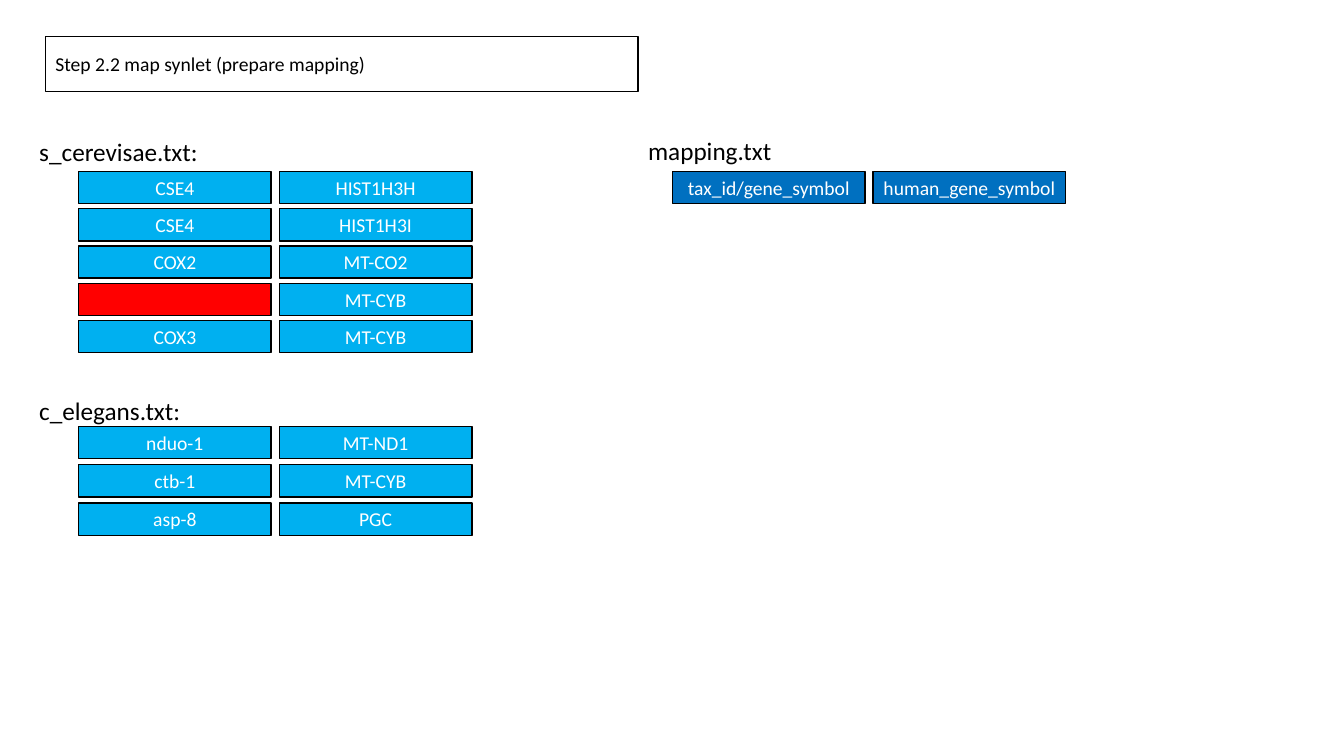
from pptx import Presentation
from pptx.dml.color import RGBColor
from pptx.enum.shapes import MSO_SHAPE as SHAPE
from pptx.enum.text import MSO_ANCHOR as ANCHOR, PP_ALIGN as ALIGN
from pptx.util import Pt

PX = 9144
BLACK, WHITE = "000000", "FFFFFF"
SKY, BLUE, RED = "00B0F0", "0070C0", "FF0000"


def px(n):
    return n * PX


def rgb(value):
    return RGBColor.from_string(value)


class Deck:
    font = "Calibri"
    cell_w, cell_h, column_step = 191, 32, 199

    def __init__(self, prs):
        self.slide = prs.slides.add_slide(prs.slide_layouts[6])

    def set_text(self, s, text, size, color, align=ALIGN.LEFT, margin=10):
        tf = s.text_frame
        tf.word_wrap = True
        tf.margin_left = tf.margin_right = px(margin)
        tf.text = text
        p = tf.paragraphs[0]
        p.alignment = align
        for r in p.runs:
            r.font.name = self.font
            r.font.size = Pt(size)
            r.font.color.rgb = rgb(color)

    def rect(self, x, y, w, h, fill=None):
        s = self.slide.shapes.add_shape(SHAPE.RECTANGLE, px(x), px(y), px(w), px(h))
        s.shadow.inherit = False
        if fill:
            s.fill.solid()
            s.fill.fore_color.rgb = rgb(fill)
        else:
            s.fill.background()
        s.line.color.rgb = rgb(BLACK)
        s.line.width = Pt(1)
        s.text_frame.vertical_anchor = ANCHOR.MIDDLE
        return s

    def title(self, x, y, w, h, text):
        self.set_text(self.rect(x, y, w, h), text, 14, BLACK)

    def label(self, x, y, w, text):
        s = self.slide.shapes.add_textbox(px(x), px(y), px(w), px(40))
        self.set_text(s, text, 18, BLACK)

    def grid(self, x, y, step, rows, fill):
        for i, row in enumerate(rows):
            for j, text in enumerate(row):
                s = self.rect(x + j * self.column_step, y + i * step,
                              self.cell_w, self.cell_h, fill if text else RED)
                if text:
                    self.set_text(s, text, 14, WHITE, ALIGN.CENTER, 5)


def main():
    prs = Presentation()
    prs.slide_width, prs.slide_height = px(1333), px(750)
    deck = Deck(prs)

    deck.title(45, 36, 588, 55, "Step 2.2 map synlet (prepare mapping)")

    deck.label(29, 130, 179, "s_cerevisae.txt:")
    deck.grid(78, 170, 37, [
        ("CSE4", "HIST1H3H"),
        ("CSE4", "HIST1H3I"),
        ("COX2", "MT-CO2"),
        ("", "MT-CYB"),
        ("COX3", "MT-CYB"),
    ], SKY)

    deck.grid(78, 423, 38, [
        ("nduo-1", "MT-ND1"),
        ("ctb-1", "MT-CYB"),
        ("asp-8", "PGC"),
    ], SKY)
    deck.label(29, 387, 162, "c_elegans.txt:")

    deck.label(633, 129, 144, "mapping.txt")
    deck.grid(667, 170, 37, [("tax_id/gene_symbol", "human_gene_symbol")], BLUE)

    prs.save("out.pptx")


if __name__ == "__main__":
    main()
